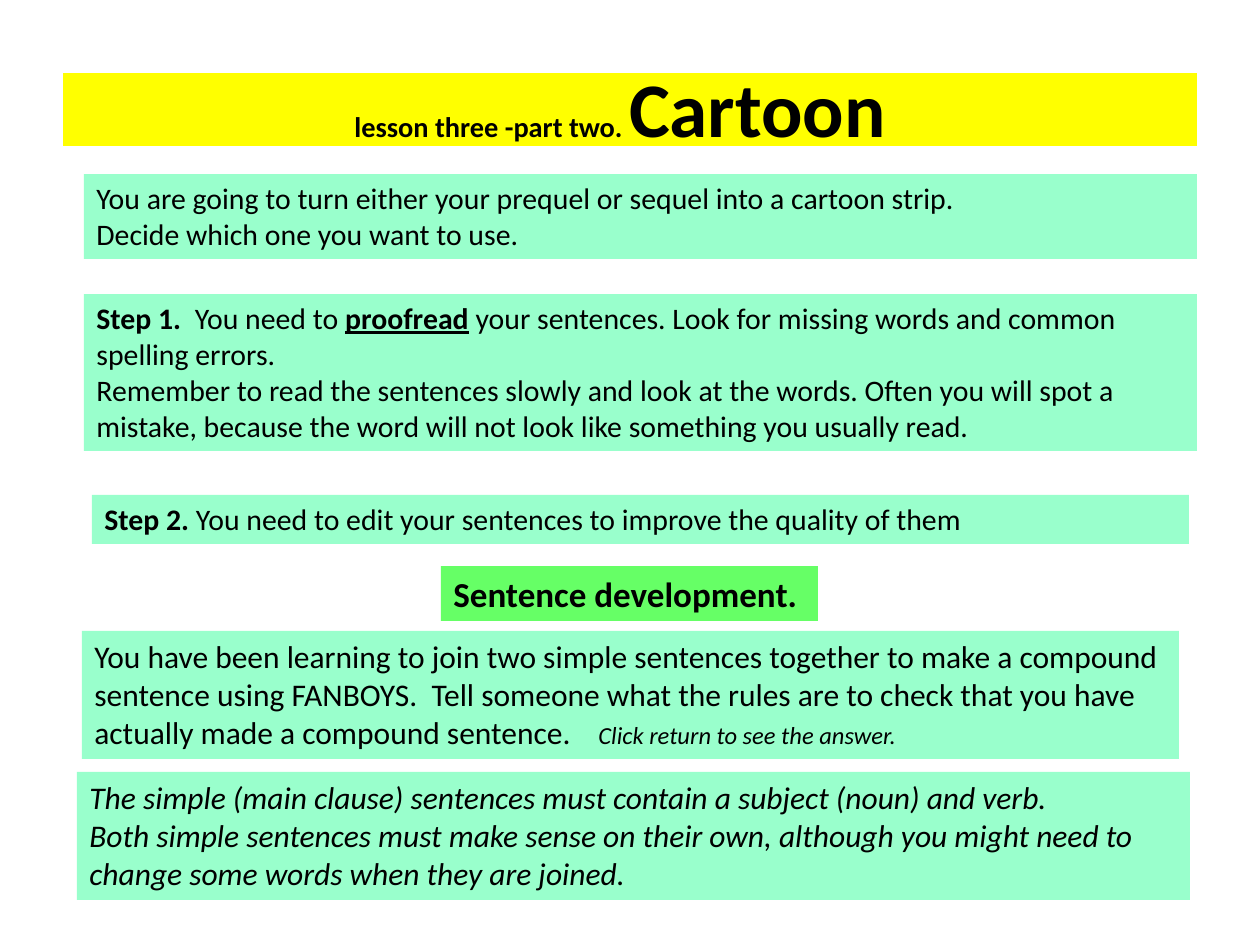
from pptx import Presentation
from pptx.dml.color import RGBColor
from pptx.enum.shapes import MSO_SHAPE
from pptx.enum.text import MSO_ANCHOR, MSO_AUTO_SIZE, PP_ALIGN
from pptx.util import Emu, Pt

PIXELS_PER_INCH = 126
FONT = "Calibri"
BLACK, YELLOW, MINT, GREEN = "000000", "FFFF00", "99FFCC", "66FF66"
BOLD, ITALIC = {"bold": True}, {"italic": True}

PANELS = [
    ((84, 174, 1113, 85), MINT, 17, [
        [("You are going to turn either your prequel or sequel into a cartoon strip.", {})],
        [("Decide which one you want to use.", {})],
    ]),
    ((84, 294, 1113, 157), MINT, 17, [
        [("Step 1.  ", BOLD), ("You need to ", {}),
         ("proofread", {"bold": True, "underline": True}),
         (" your sentences. Look for missing words and common spelling errors.", {})],
        [("Remember to read the sentences slowly and look at the words. Often you will spot a "
          "mistake, because the word will not look like something you usually read.", {})],
    ]),
    ((92, 495, 1097, 49), MINT, 17, [
        [("Step 2. ", BOLD),
         ("You need to edit your sentences to improve the quality of them", {})],
    ]),
    ((441, 566, 377, 55), GREEN, 20, [[("Sentence development.", BOLD)]]),
    ((82, 631, 1097, 128), MINT, 18, [
        [("You have been learning to join two simple sentences together to make a compound "
          "sentence using FANBOYS.  Tell someone what the rules are to check that you have "
          "actually made a compound sentence.\t", {}),
         ("Click return to see the answer.", {"italic": True, "size": Pt(14)})],
    ]),
    ((77, 772, 1113, 128), MINT, 18, [
        [("The simple (main clause) sentences must contain a subject (noun) and verb.", ITALIC)],
        [("Both simple sentences must make sense on their own, although you might need to "
          "change some words when they are joined.", ITALIC)],
    ]),
]


def px(length):
    """Turn a length in px into EMU."""
    return Emu(round(length * 914400 / PIXELS_PER_INCH))


def color(value):
    """Turn a hex string into a colour."""
    return RGBColor.from_string(value)


def paint(shape, value):
    """Give a shape a plain fill."""
    shape.fill.solid()
    shape.fill.fore_color.rgb = color(value)


def write_paragraph(para, spans, size, align):
    """Fill a paragraph with spans of text and their font settings."""
    para.alignment = align
    para.font.name = FONT
    para.font.size = Pt(size)
    para.font.color.rgb = color(BLACK)
    for text, settings in spans:
        span = para.add_run()
        span.text = text
        for name, value in settings.items():
            setattr(span.font, name, value)


def add_title(page, box):
    """Place the yellow lesson heading."""
    title = page.shapes.title
    title.left, title.top, title.width, title.height = map(px, box)
    paint(title, YELLOW)
    frame = title.text_frame
    frame.auto_size = MSO_AUTO_SIZE.NONE
    frame.vertical_anchor = MSO_ANCHOR.MIDDLE
    frame.margin_right = px(32)
    frame.margin_bottom = px(12)
    spans = [("lesson three -part two. ", {"bold": True, "size": Pt(16.2)}),
             ("Cartoon", BOLD)]
    write_paragraph(frame.paragraphs[0], spans, 44.1, PP_ALIGN.CENTER)


def add_panel(page, box, fill, size, paragraphs):
    """Place a filled panel of left-aligned text."""
    panel = page.shapes.add_shape(MSO_SHAPE.RECTANGLE, *map(px, box))
    panel.shadow.inherit = False
    panel.line.fill.background()
    paint(panel, fill)
    frame = panel.text_frame
    frame.word_wrap = True
    frame.auto_size = MSO_AUTO_SIZE.SHAPE_TO_FIT_TEXT
    frame.vertical_anchor = MSO_ANCHOR.TOP
    for index, spans in enumerate(paragraphs):
        para = frame.add_paragraph() if index else frame.paragraphs[0]
        write_paragraph(para, spans, size, PP_ALIGN.LEFT)


def main():
    """Build the lesson slide and save it."""
    deck = Presentation()
    deck.slide_width, deck.slide_height = px(1260), px(945)
    page = deck.slides.add_slide(deck.slide_layouts[5])
    add_title(page, (63, 73, 1134, 73))
    for panel in PANELS:
        add_panel(page, *panel)
    deck.save("out.pptx")


if __name__ == "__main__":
    main()
